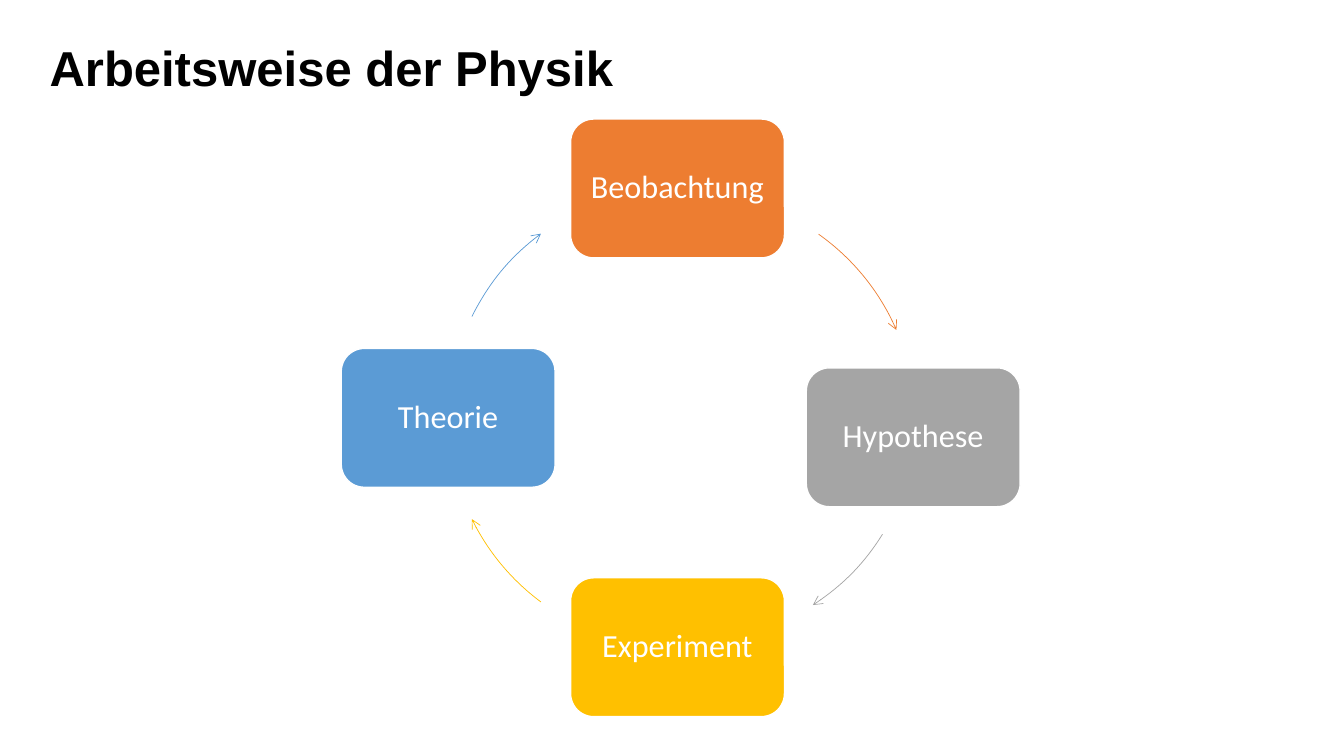
from lxml import etree
from pptx import Presentation
from pptx.dml.color import RGBColor
from pptx.enum.shapes import MSO_SHAPE
from pptx.enum.text import MSO_ANCHOR, PP_ALIGN
from pptx.oxml.ns import qn
from pptx.util import Cm, Pt

ROUNDED = MSO_SHAPE.ROUNDED_RECTANGLE
ARC = MSO_SHAPE.ARC
MIDDLE = MSO_ANCHOR.MIDDLE
CENTER = PP_ALIGN.CENTER
LEFT = PP_ALIGN.LEFT

COLORS = {
    "black": "000000",
    "white": "FFFFFF",
    "orange": "ED7D31",
    "gray": "A5A5A5",
    "yellow": "FFC000",
    "blue": "5B9BD5",
}
TITLE_FONT = {"name": "Arial", "size": Pt(35), "bold": True}
STEP_FONT = {"name": "Calibri", "size": Pt(23), "bold": False}

STEP_WIDTH, STEP_HEIGHT = 5.39, 3.5
RING_SIZE = 11.56
STEPS = [
    ("Beobachtung", "orange", (5.78, 0), (2.91, 1.84), (305.3, 336.5)),
    ("Hypothese", "gray", (11.72, 6.27), (2.96, 1.62), (32, 57)),
    ("Experiment", "yellow", (5.78, 11.56), (2.7, 1.75), (126.6, 153.8)),
    ("Theorie", "blue", (0, 5.78), (2.7, 1.75), (206.2, 233.4)),
]


def rgb(color):
    return RGBColor.from_string(COLORS[color])


def write_text(shape, text, font_format, color, alignment):
    shape.text_frame.word_wrap = True
    paragraph = shape.text_frame.paragraphs[0]
    paragraph.text = text
    paragraph.alignment = alignment
    paragraph.line_spacing = 0.9
    font = paragraph.runs[0].font
    for attribute, value in font_format.items():
        setattr(font, attribute, value)
    font.color.rgb = rgb(color)


def add_title(slide, left, top, width, height):
    title = slide.shapes.add_textbox(Cm(left), Cm(top), Cm(width), Cm(height))
    write_text(title, "Arbeitsweise der Physik", TITLE_FONT, "black", LEFT)


def add_step(slide, left, top, text, color):
    step = slide.shapes.add_shape(
        ROUNDED, Cm(left), Cm(top), Cm(STEP_WIDTH), Cm(STEP_HEIGHT))
    step.shadow.inherit = False
    step.fill.solid()
    step.fill.fore_color.rgb = rgb(color)
    step.line.color.rgb = rgb("white")
    step.line.width = Pt(1)
    step.text_frame.vertical_anchor = MIDDLE
    write_text(step, text, STEP_FONT, "white", CENTER)


def add_arc_arrow(slide, left, top, angles, color):
    arrow = slide.shapes.add_shape(
        ARC, Cm(left), Cm(top), Cm(RING_SIZE), Cm(RING_SIZE))
    arrow.shadow.inherit = False
    arrow.fill.background()
    for index, angle in enumerate(angles):
        arrow.adjustments[index] = angle * 0.6
    arrow.line.color.rgb = rgb(color)
    arrow.line.width = Pt(0.5)
    line = arrow.line.fill._xPr
    etree.SubElement(line, qn("a:tailEnd"), type="arrow")


def add_cycle(slide, left, top):
    for text, color, (step_x, step_y), (ring_x, ring_y), angles in STEPS:
        add_step(slide, left + step_x, top + step_y, text, color)
        add_arc_arrow(slide, left + ring_x, top + ring_y, angles, color)


def main():
    presentation = Presentation()
    presentation.slide_width = Cm(33.87)
    presentation.slide_height = Cm(19.05)
    slide = presentation.slides.add_slide(presentation.slide_layouts[6])
    add_title(slide, 1, 1, 15.8, 2.29)
    add_cycle(slide, 8.6, 3)
    presentation.save("out.pptx")


if __name__ == "__main__":
    main()
